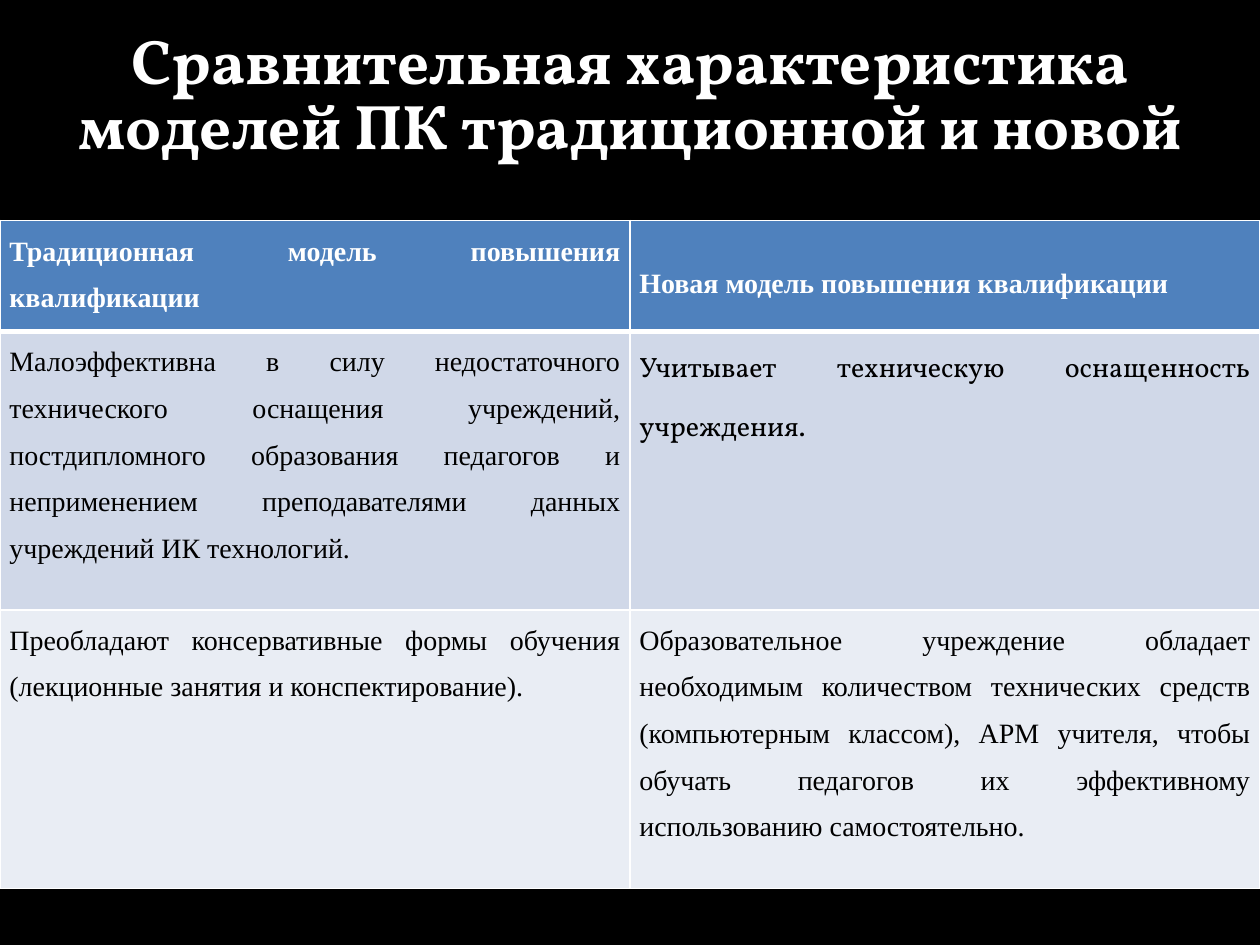
from dataclasses import dataclass

from lxml import etree
from pptx import Presentation
from pptx import util as u
from pptx.dml.color import RGBColor
from pptx.enum import text
from pptx.oxml import ns

COLORS = {
    "background": "000000",
    "white": "FFFFFF",
    "black": "000000",
    "header": "4F81BD",
    "odd_row": "D0D8E8",
    "even_row": "E9EDF4",
}
SERIF, DISPLAY = "Times New Roman", "Vollkorn"
TITLE = "Сравнительная характеристика моделей ПК традиционной и новой"


@dataclass
class Entry:
    words: str
    font: str = SERIF
    anchor: text.MSO_ANCHOR = text.MSO_ANCHOR.TOP
    space_after: float = 0


@dataclass
class Row:
    height: float
    fill: str
    entries: tuple[Entry, Entry]
    color: str = "black"
    bold: bool = False
    bottom_border: float = 1


ROWS = [
    Row(63.36, "header", (
        Entry("Традиционная модель повышения квалификации"),
        Entry("Новая модель повышения квалификации",
              anchor=text.MSO_ANCHOR.MIDDLE, space_after=8),
    ), color="white", bold=True, bottom_border=3),
    Row(159.12, "odd_row", (
        Entry("Малоэффективна в силу недостаточного технического оснащения "
              "учреждений, постдипломного образования педагогов и неприменением "
              "преподавателями данных учреждений ИК технологий."),
        Entry("Учитывает техническую оснащенность учреждения.", font=DISPLAY),
    )),
    Row(159.12, "even_row", (
        Entry("Преобладают консервативные формы обучения "
              "(лекционные занятия и конспектирование)."),
        Entry("Образовательное учреждение обладает необходимым количеством "
              "технических средств (компьютерным классом), АРМ учителя, чтобы "
              "обучать педагогов их эффективному использованию самостоятельно."),
    )),
]


def rgb(name: str) -> RGBColor:
    """Look up a named colour."""
    return RGBColor.from_string(COLORS[name])


def add_run(paragraph, words: str, font: str, size: float, color: str, bold: bool) -> None:
    """Append one formatted run to a paragraph."""
    run = paragraph.add_run()
    run.text = words
    run.font.name = font
    run.font.size = u.Pt(size)
    run.font.bold = bold
    run.font.color.rgb = rgb(color)


def add_border(cell, side: str, width: float) -> None:
    """Give one side of a cell a solid white line."""
    properties = cell._tc.get_or_add_tcPr()
    line = etree.SubElement(properties, ns.qn(f"a:ln{side}"), w=str(u.Pt(width)))
    fill = etree.SubElement(line, ns.qn("a:solidFill"))
    etree.SubElement(fill, ns.qn("a:srgbClr"), val=COLORS["white"])


def add_title(slide) -> None:
    """Draw the centred heading."""
    shape = slide.shapes.add_textbox(u.Pt(0), u.Pt(0), u.Pt(720), u.Pt(111.6))
    frame = shape.text_frame
    frame.word_wrap = True
    frame.vertical_anchor = text.MSO_ANCHOR.MIDDLE
    paragraph = frame.paragraphs[0]
    paragraph.alignment = text.PP_ALIGN.CENTER
    paragraph.line_spacing = 0.86
    add_run(paragraph, TITLE, DISPLAY, 36, "white", True)


def fill_cell(cell, entry: Entry, row: Row, top_border: float) -> None:
    """Format one table cell and write its text."""
    for side, width in zip("LRTB", (1, 1, top_border, row.bottom_border)):
        add_border(cell, side, width)
    cell.fill.solid()
    cell.fill.fore_color.rgb = rgb(row.fill)
    cell.margin_left = cell.margin_right = u.Pt(5.4)
    cell.margin_top = cell.margin_bottom = u.Pt(0)
    cell.vertical_anchor = entry.anchor
    paragraph = cell.text_frame.paragraphs[0]
    paragraph.alignment = text.PP_ALIGN.JUSTIFY
    paragraph.line_spacing = 1.5
    paragraph.space_after = u.Pt(entry.space_after)
    add_run(paragraph, entry.words, entry.font, 16, row.color, row.bold)


def add_comparison(slide, rows: list[Row]) -> None:
    """Draw the two-column comparison table."""
    height = sum(row.height for row in rows)
    table = slide.shapes.add_table(
        len(rows), 2, u.Pt(0), u.Pt(126), u.Pt(720), u.Pt(height)).table
    top_border = 1
    for index, row in enumerate(rows):
        table.rows[index].height = u.Pt(row.height)
        for column, entry in enumerate(row.entries):
            fill_cell(table.cell(index, column), entry, row, top_border)
        top_border = row.bottom_border


def main() -> None:
    """Build and save the presentation."""
    presentation = Presentation()
    presentation.slide_width, presentation.slide_height = u.Pt(720), u.Pt(540)
    slide = presentation.slides.add_slide(presentation.slide_layouts[6])
    slide.background.fill.solid()
    slide.background.fill.fore_color.rgb = rgb("background")
    add_title(slide)
    add_comparison(slide, ROWS)
    presentation.save("out.pptx")


if __name__ == "__main__":
    main()
